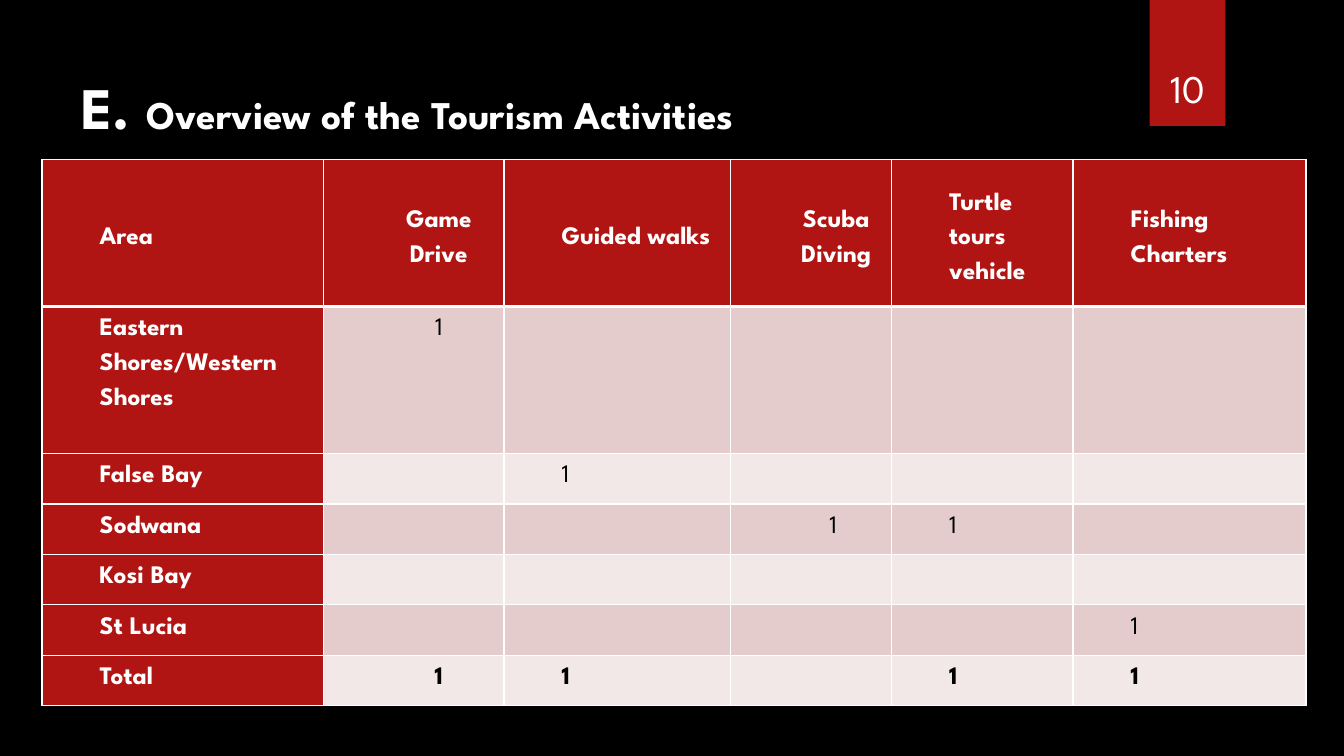
import dataclasses
import typing

import pptx
import pptx.dml.color
import pptx.enum.shapes
import pptx.enum.text
import pptx.oxml
import pptx.oxml.ns
import pptx.util

PX = 9525  # EMU per px, 96 px to the inch
ALIGN = pptx.enum.text.PP_ALIGN
ANCHOR = pptx.enum.text.MSO_ANCHOR


@dataclasses.dataclass(frozen=True)
class Theme:
    font: str = "League Spartan"
    black: str = "000000"
    white: str = "FFFFFF"
    red: str = "B01513"
    bands: tuple[str, str] = ("E4CCCC", "F2E8E7")
    letter_size: int = 42
    title_size: int = 28
    table_size: int = 18


class Box(typing.NamedTuple):
    left: int
    top: int
    width: int
    height: int

    def emu(self) -> list[int]:
        return [v * PX for v in self]


class Column(typing.NamedTuple):
    heading: str
    width: int
    align: ALIGN


class Row(typing.NamedTuple):
    area: str
    height: int
    values: tuple[str, ...]
    bold: bool = False


THEME = Theme()
TITLE_BOX = Box(68, 48, 988, 105)
BANNER_BOX = Box(1095, 0, 72, 120)
NUMBER_BOX = Box(1087, 31, 88, 80)
TABLE_LEFT, TABLE_TOP, HEADER_HEIGHT = 40, 152, 140
CELL_MARGIN, CELL_INDENT = 7, 48

COLUMNS = [
    Column("Area", 268, ALIGN.LEFT),
    Column("Game Drive", 172, ALIGN.CENTER),
    Column("Guided walks", 216, ALIGN.LEFT),
    Column("Scuba Diving", 153, ALIGN.CENTER),
    Column("Turtle tours vehicle", 173, ALIGN.LEFT),
    Column("Fishing Charters", 222, ALIGN.LEFT),
]
ROWS = [
    Row("Eastern Shores/Western Shores", 140, ("1", "", "", "", "")),
    Row("False Bay", 48, ("", "1", "", "", "")),
    Row("Sodwana", 48, ("", "", "1 ", "1", "")),
    Row("Kosi Bay", 48, ("", "", "", "", "")),
    Row("St Lucia", 48, ("", "", "", "", "1")),
    Row("Total", 48, ("1", "1", "", "1", "1"), bold=True),
]


def rgb(color: str) -> pptx.dml.color.RGBColor:
    return pptx.dml.color.RGBColor.from_string(color)


def style_font(font, size: int, color: str, bold: bool = False) -> None:
    font.name = THEME.font
    font.size = pptx.util.Pt(size)
    font.bold = bold
    font.color.rgb = rgb(color)


def add_title(slide) -> None:
    sp = slide.shapes.title
    sp.left, sp.top, sp.width, sp.height = TITLE_BOX.emu()
    tf = sp.text_frame
    tf.vertical_anchor = ANCHOR.MIDDLE
    p = tf.paragraphs[0]
    p.alignment = ALIGN.LEFT
    for text, size in (("E. ", THEME.letter_size),
                       ("Overview of the Tourism Activities", THEME.title_size)):
        r = p.add_run()
        r.text = text
        style_font(r.font, size, THEME.white, bold=True)


def add_page_number(slide, number: str) -> None:
    sp = slide.shapes.add_shape(
        pptx.enum.shapes.MSO_SHAPE.RECTANGLE, *BANNER_BOX.emu())
    sp.shadow.inherit = False
    sp.fill.solid()
    sp.fill.fore_color.rgb = rgb(THEME.red)
    sp.line.fill.background()

    tf = slide.shapes.add_textbox(*NUMBER_BOX.emu()).text_frame
    tf.word_wrap = True
    tf.vertical_anchor = ANCHOR.BOTTOM
    tf.text = number
    p = tf.paragraphs[0]
    p.alignment = ALIGN.CENTER
    style_font(p.runs[0].font, THEME.title_size, THEME.white)


def set_borders(cell, top: int, bottom: int) -> None:
    """Draw white cell borders; top and bottom widths are in points."""
    tc_pr = cell._tc.get_or_add_tcPr()
    widths = {"lnL": 1, "lnR": 1, "lnT": top, "lnB": bottom}
    for i, (tag, width) in enumerate(widths.items()):
        tc_pr.insert(i, pptx.oxml.parse_xml(
            f'<a:{tag} {pptx.oxml.ns.nsdecls("a")} w="{pptx.util.Pt(width)}">'
            f'<a:solidFill><a:srgbClr val="{THEME.white}"/></a:solidFill></a:{tag}>'))


def fill_cell(cell, text: str, align: ALIGN, fill: str, color: str, bold: bool) -> None:
    cell.fill.solid()
    cell.fill.fore_color.rgb = rgb(fill)
    cell.margin_left = cell.margin_right = CELL_MARGIN * PX
    cell.margin_top = cell.margin_bottom = 0
    p = cell.text_frame.paragraphs[0]
    p.text = text
    p.alignment = align
    p.line_spacing = 1.5
    p._p.get_or_add_pPr().set("marL", str(CELL_INDENT * PX))
    for r in p.runs:
        style_font(r.font, THEME.table_size, color, bold)


def add_activity_table(slide) -> None:
    heights = [HEADER_HEIGHT] + [row.height for row in ROWS]
    box = Box(TABLE_LEFT, TABLE_TOP, sum(c.width for c in COLUMNS), sum(heights))
    table = slide.shapes.add_table(len(heights), len(COLUMNS), *box.emu()).table
    for table_row, height in zip(table.rows, heights):
        table_row.height = height * PX

    for j, column in enumerate(COLUMNS):
        table.columns[j].width = column.width * PX
        # Heading
        cell = table.cell(0, j)
        fill_cell(cell, column.heading, column.align, THEME.red, THEME.white, True)
        cell.vertical_anchor = ANCHOR.MIDDLE
        set_borders(cell, top=1, bottom=3)
        # Areas in the first column, banded values in the others
        for i, row in enumerate(ROWS):
            cell = table.cell(i + 1, j)
            if j == 0:
                fill_cell(cell, row.area, column.align, THEME.red, THEME.white, True)
            else:
                fill_cell(cell, row.values[j - 1], column.align,
                          THEME.bands[i % 2], THEME.black, row.bold)
            set_borders(cell, top=3 if i == 0 else 1, bottom=1)


def main() -> None:
    prs = pptx.Presentation()
    prs.slide_width, prs.slide_height = 1280 * PX, 720 * PX
    slide = prs.slides.add_slide(prs.slide_layouts[5])
    slide.background.fill.solid()
    slide.background.fill.fore_color.rgb = rgb(THEME.black)

    add_title(slide)
    add_page_number(slide, "10")
    add_activity_table(slide)
    prs.save("out.pptx")


if __name__ == "__main__":
    main()
